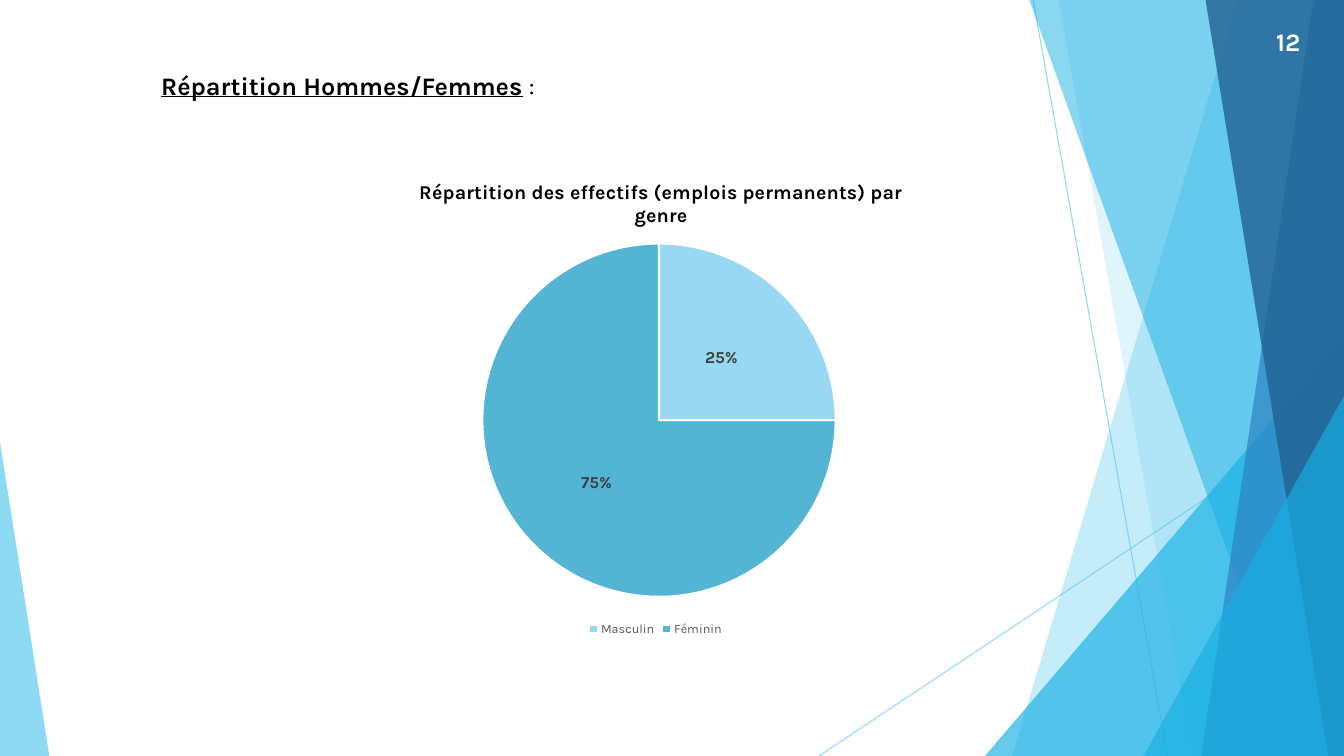
from dataclasses import dataclass

from lxml.etree import SubElement
from pptx import Presentation
from pptx.chart.data import CategoryChartData
from pptx.dml.color import RGBColor
from pptx.enum.chart import XL_CHART_TYPE as ChartType
from pptx.enum.chart import XL_LABEL_POSITION as LabelPosition
from pptx.enum.chart import XL_LEGEND_POSITION as LegendPosition
from pptx.enum.shapes import MSO_CONNECTOR as Connector
from pptx.enum.shapes import MSO_SHAPE as Preset
from pptx.oxml import parse_xml
from pptx.oxml.ns import nsdecls, qn
from pptx.util import Emu, Pt


@dataclass(frozen=True)
class Theme:
    """Colours, font and type sizes of the deck."""
    font: str = "Karla"
    white: str = "FFFFFF"
    black: str = "000000"
    sky: str = "5FCBEF"
    cyan: str = "17B0E4"
    blue: str = "2E83C3"
    navy: str = "226292"
    male: str = "99D8F3"
    female: str = "54B4D4"
    label_grey: str = "404040"
    legend_grey: str = "595959"
    heading: int = 18
    chart_title: int = 14
    label: int = 12
    legend: int = 9


THEME = Theme()
WIDTH, HEIGHT = 1280, 720


def px(length):
    """Turn px into EMU."""
    return Emu(length * 9525)


def style_font(font, size, color, bold=False, underline=None):
    """Set the face, size and colour of a font."""
    font.name, font.size = THEME.font, Pt(size)
    font.bold, font.underline = bold, underline
    font.color.rgb = RGBColor.from_string(color)


def set_alpha(fill, element, color, percent):
    """Give a solid fill its colour and opacity."""
    fill.solid()
    fill.fore_color.rgb = RGBColor.from_string(color)
    tint = next(element.iter(qn("a:srgbClr")))
    SubElement(tint, qn("a:alpha")).set("val", str(percent * 1000))


def paint(shape, color, percent):
    """Fill a facet without outline or shadow."""
    set_alpha(shape.fill, shape.element.spPr, color, percent)
    shape.line.fill.background()
    shape.shadow.inherit = False


def add_hairline(page, start, end):
    """Draw a thin translucent line."""
    line = page.shapes.add_connector(Connector.STRAIGHT, *map(px, start + end))
    line.line.width = Pt(0.75)
    properties = line.element.spPr
    set_alpha(line.line.fill, properties, THEME.sky, 70)
    SubElement(properties, qn("a:effectLst"))


def add_band(page, top, bottom, color, percent):
    """Draw a band from a slanted left edge to the right of the page."""
    builder = page.shapes.build_freeform(top, -1, scale=px(1))
    builder.add_line_segments([(WIDTH, -1), (WIDTH, HEIGHT), (bottom, HEIGHT)])
    paint(builder.convert_to_shape(), color, percent)


def add_wedge(page, left, width, height, apex, color, percent):
    """Draw a triangle standing on the bottom of the page."""
    box = (left, HEIGHT - height, width, height)
    wedge = page.shapes.add_shape(Preset.ISOSCELES_TRIANGLE, *map(px, box))
    wedge.adjustments[0] = apex
    paint(wedge, color, percent)


def add_facets(page):
    """Build the decoration along the page edges."""
    add_hairline(page, (984, 0), (1112, HEIGHT))
    add_hairline(page, (WIDTH, 387), (780, HEIGHT))
    add_band(page, 1179, 964, THEME.sky, 36)
    add_band(page, 1008, 1136, THEME.sky, 20)
    add_wedge(page, 938, 342, 400, 1, THEME.cyan, 66)
    add_band(page, 980, 1239, THEME.cyan, 50)
    add_band(page, 1251, 1144, THEME.blue, 70)
    add_band(page, 1148, 1265, THEME.navy, 80)
    add_wedge(page, 1089, 191, 343, 1, THEME.cyan, 66)
    add_wedge(page, 0, 47, 299, 0, THEME.sky, 70)


def add_text(page, box, color, spans, wrap=True):
    """Write one line from (text, bold, underline) spans."""
    frame = page.shapes.add_textbox(*map(px, box)).text_frame
    frame.word_wrap = wrap
    para = frame.paragraphs[0]
    for text, bold, underline in spans:
        span = para.add_run()
        span.text = text
        style_font(span.font, THEME.heading, color, bold, underline)


def place_part(parent, index, **fractions):
    """Fix the place of a chart part as fractions of the chart."""
    for old in parent.findall(qn("c:layout")):
        parent.remove(old)
    modes = "".join(f'<c:{axis}Mode val="edge"/>' for axis in "xy")
    sizes = "".join(f'<c:{key} val="{value}"/>' for key, value in fractions.items())
    target = '<c:layoutTarget val="inner"/>' if "w" in fractions else ""
    parent.insert(index, parse_xml(
        f'<c:layout {nsdecls("c")}><c:manualLayout>{target}{modes}{sizes}'
        '</c:manualLayout></c:layout>'))


def add_gender_chart(page, box):
    """Build the pie of staff by gender."""
    data = CategoryChartData()
    data.categories = ["Masculin", "Féminin"]
    data.add_series("Series 1", (25, 75))
    chart = page.shapes.add_chart(ChartType.PIE, *map(px, box), data).chart
    style_font(chart.font, 10, THEME.black)

    chart.has_title = True
    span = chart.chart_title.text_frame.paragraphs[0].add_run()
    span.text = "Répartition des effectifs (emplois permanents) par genre"
    style_font(span.font, THEME.chart_title, THEME.black, True)
    place_part(chart.chart_title.element, 1, x=0.14, y=0.04)

    chart.has_legend = True
    chart.legend.position = LegendPosition.BOTTOM
    chart.legend.include_in_layout = False
    style_font(chart.legend.font, THEME.legend, THEME.legend_grey)

    plot = chart.plots[0]
    plot.vary_by_categories = True
    place_part(plot._element.getparent(), 0, x=0.24, y=0.18, w=0.53, h=0.73)
    for index, color in enumerate((THEME.male, THEME.female)):
        point = plot.series[0].points[index].format
        point.fill.solid()
        point.fill.fore_color.rgb = RGBColor.from_string(color)
        point.line.color.rgb = RGBColor.from_string(THEME.white)
        point.line.width = Pt(1.5)

    plot.has_data_labels = True
    labels = plot.data_labels
    labels.show_percentage, labels.show_value = True, False
    labels.number_format, labels.number_format_is_linked = "0%", False
    labels.position = LabelPosition.CENTER
    style_font(labels.font, THEME.label, THEME.label_grey, True)


def add_gender_page(deck):
    """Build the page on the split of men and women."""
    page = deck.slides.add_slide(deck.slide_layouts[6])
    add_facets(page)
    add_text(page, (1206, 20, 64, 38), THEME.white, [("12", True, False)])
    heading = [("Répartition Hommes/Femmes", True, True), (" ", True, False), (":", False, False)]
    add_text(page, (144, 62, 376, 38), THEME.black, heading, wrap=False)
    add_gender_chart(page, (307, 149, 635, 461))


def main():
    """Build and save the deck."""
    deck = Presentation()
    deck.slide_width, deck.slide_height = px(WIDTH), px(HEIGHT)
    add_gender_page(deck)
    deck.save("out.pptx")


if __name__ == "__main__":
    main()
